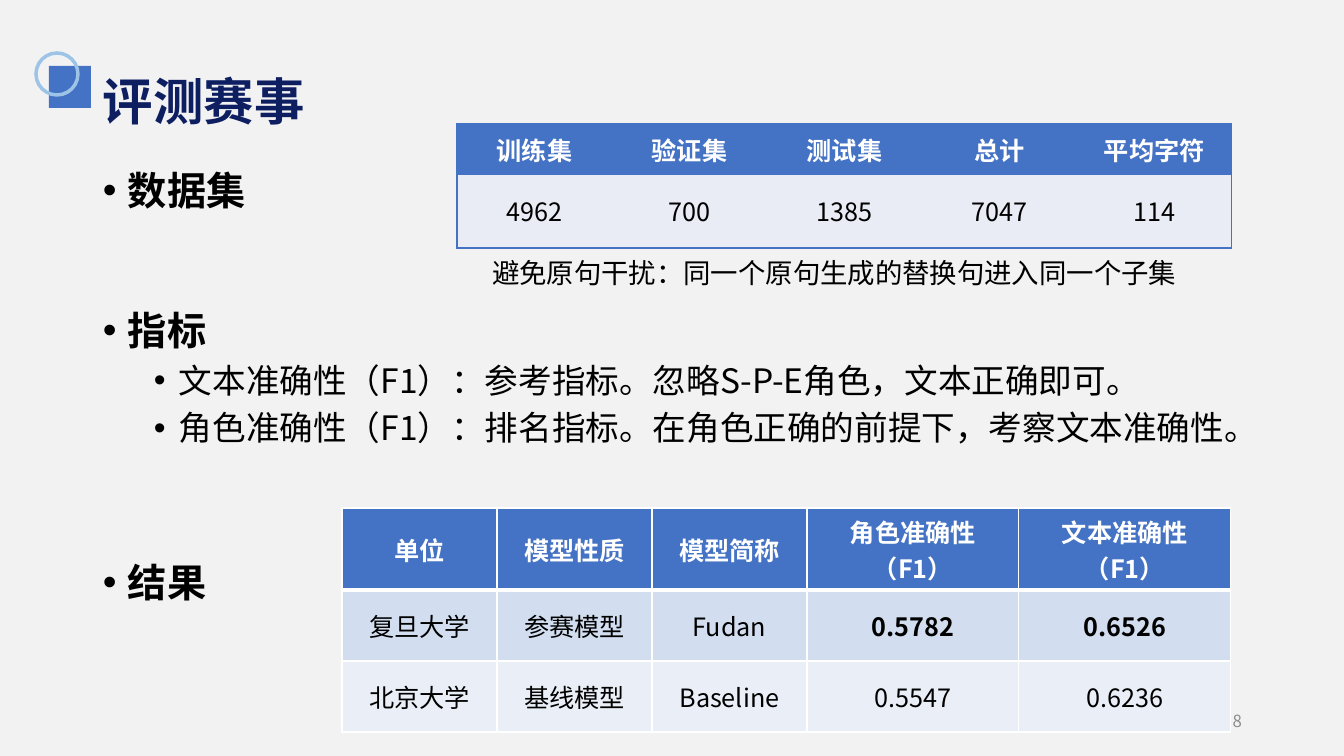
from lxml import etree
from pptx import Presentation
from pptx.dml.color import RGBColor
from pptx.enum.shapes import MSO_SHAPE
from pptx.enum.text import MSO_ANCHOR, PP_ALIGN
from pptx.oxml.ns import qn
from pptx.util import Emu, Pt

RECTANGLE, OVAL = MSO_SHAPE.RECTANGLE, MSO_SHAPE.OVAL
TOP, MIDDLE = MSO_ANCHOR.TOP, MSO_ANCHOR.MIDDLE
LEFT, CENTER, RIGHT = PP_ALIGN.LEFT, PP_ALIGN.CENTER, PP_ALIGN.RIGHT

SLIDE_W, SLIDE_H = 1344, 756
EMU_PER_PX = 12192000 / SLIDE_W
FONT = "Noto Sans CJK SC"
COLORS = {
    "background": "F2F2F3",
    "blue": "4472C4",
    "ring": "9DC3E6",
    "title": "0D1E61",
    "text": "000000",
    "white": "FFFFFF",
    "page": "8C8C8C",
    "counts": "E9EBF5",
    "band_dark": "D2DEEF",
    "band_light": "EAEFF7",
}


def px(n):
    return Emu(round(n * EMU_PER_PX))


def rgb(name):
    return RGBColor.from_string(COLORS[name])


def style_paragraph(p, size, color="text", bold=False, align=LEFT):
    p.alignment = align
    for r in p.runs:
        r.font.size = Pt(size)
        r.font.bold = bold
        r.font.color.rgb = rgb(color)
        r.font.name = FONT
        ea = etree.SubElement(r._r.get_or_add_rPr(), qn("a:ea"))
        ea.set("typeface", FONT)


def set_margins(box, x, y):
    box.margin_left = box.margin_right = px(x)
    box.margin_top = box.margin_bottom = px(y)


def add_text(slide, box, text, size, anchor=TOP, spacing=1.0, **style):
    tf = slide.shapes.add_textbox(*map(px, box)).text_frame
    tf.word_wrap = True
    tf.vertical_anchor = anchor
    set_margins(tf, 10, 5)
    p = tf.paragraphs[0]
    p.text = text
    p.line_spacing = spacing
    style_paragraph(p, size, **style)


def add_bullet(p, margin):
    pPr = p._p.get_or_add_pPr()
    pPr.set("marL", str(px(margin)))
    pPr.set("indent", str(px(-25)))
    font = etree.SubElement(pPr, qn("a:buFont"))
    font.set("typeface", "Arial")
    etree.SubElement(pPr, qn("a:buChar")).set("char", "•")


def add_section(slide, top, heading, items=()):
    height = 57 + 56 * len(items)
    tf = slide.shapes.add_textbox(px(103), px(top), px(1190), px(height)).text_frame
    tf.word_wrap = True
    set_margins(tf, 0, 0)
    p = tf.paragraphs[0]
    p.text = heading
    style_paragraph(p, 28, bold=True)
    add_bullet(p, 25)
    for item in items:
        p = tf.add_paragraph()
        p.text = item
        p.level = 1
        p.space_before = Pt(5)
        style_paragraph(p, 24)
        add_bullet(p, 76)


def add_mark(slide, kind, box, fill=None, line=None):
    sp = slide.shapes.add_shape(kind, *map(px, box))
    sp.shadow.inherit = False
    if fill:
        sp.fill.solid()
        sp.fill.fore_color.rgb = rgb(fill)
    else:
        sp.fill.background()
    if line:
        sp.line.color.rgb = rgb(line)
        sp.line.width = Pt(2.5)
    else:
        sp.line.fill.background()


def set_borders(cell, borders):
    tcPr = cell._tc.get_or_add_tcPr()
    for side in "LRTB":
        color, width = borders.get(side, (None, 0))
        ln = etree.SubElement(tcPr, qn(f"a:ln{side}"), w=str(Pt(width)))
        if color:
            fill = etree.SubElement(ln, qn("a:solidFill"))
            etree.SubElement(fill, qn("a:srgbClr"), val=COLORS[color])
        else:
            etree.SubElement(ln, qn("a:noFill"))


def counts_borders(row, col, last_col):
    line = ("blue", 1)
    borders = {"T": line, "B": line}
    if col == 0:
        borders["L"] = line
    if col == last_col:
        borders["R"] = line
    return borders


def results_borders(row, col, last_col):
    borders = dict.fromkeys("LRTB", ("white", 1))
    if row < 2:
        borders["B" if row == 0 else "T"] = ("white", 3)
    return borders


def add_grid(slide, left, top, widths, heights, rows, fills, borders, margins, bold_cells=()):
    frame = slide.shapes.add_table(
        len(rows), len(widths), px(left), px(top), px(sum(widths)), px(sum(heights))
    )
    table = frame.table
    table.first_row = table.horz_banding = False
    for column, width in zip(table.columns, widths):
        column.width = px(width)
    for i, values in enumerate(rows):
        table.rows[i].height = px(heights[i])
        for j, value in enumerate(values):
            cell = table.cell(i, j)
            cell.text = value
            cell.vertical_anchor = MIDDLE
            set_margins(cell, *margins)
            set_borders(cell, borders(i, j, len(widths) - 1))
            cell.fill.solid()
            cell.fill.fore_color.rgb = rgb(fills[i])
            header = i == 0
            for p in cell.text_frame.paragraphs:
                style_paragraph(
                    p, 18, "white" if header else "text",
                    header or (i, j) in bold_cells, CENTER,
                )


def main():
    prs = Presentation()
    prs.slide_width, prs.slide_height = px(SLIDE_W), px(SLIDE_H)
    s = prs.slides.add_slide(prs.slide_layouts[6])
    s.background.fill.solid()
    s.background.fill.fore_color.rgb = rgb("background")

    add_mark(s, RECTANGLE, (49, 66, 42, 42), fill="blue")
    add_mark(s, OVAL, (36, 53, 42, 42), line="ring")
    add_text(s, (93, 64, 1159, 81), "评测赛事", 36, MIDDLE, 0.9, color="title", bold=True)

    add_section(s, 166, "数据集")
    add_section(s, 306, "指标", [
        "文本准确性（F1）：参考指标。忽略S-P-E角色，文本正确即可。",
        "角色准确性（F1）：排名指标。在角色正确的前提下，考察文本准确性。",
    ])
    add_section(s, 558, "结果")
    add_text(s, (950, 701, 302, 40), "8", 12, MIDDLE, color="page", align=RIGHT)

    add_grid(
        s, 457, 124, [155] * 5, [50, 74],
        [["训练集", "验证集", "测试集", "总计", "平均字符"],
         ["4962", "700", "1385", "7047", "114"]],
        ["blue", "counts"], counts_borders, (0, 0),
    )
    add_text(s, (482, 255, 760, 54), "避免原句干扰：同一个原句生成的替换句进入同一个子集", 19.6, spacing=0.9)
    add_grid(
        s, 342, 508, [155] * 3 + [212] * 2, [82, 71, 71],
        [["单位", "模型性质", "模型简称", "角色准确性\n（F1）", "文本准确性\n（F1）"],
         ["复旦大学", "参赛模型", "Fudan", "0.5782", "0.6526"],
         ["北京大学", "基线模型", "Baseline", "0.5547", "0.6236"]],
        ["blue", "band_dark", "band_light"], results_borders, (10, 5),
        bold_cells={(1, 3), (1, 4)},
    )
    prs.save("out.pptx")


if __name__ == "__main__":
    main()
